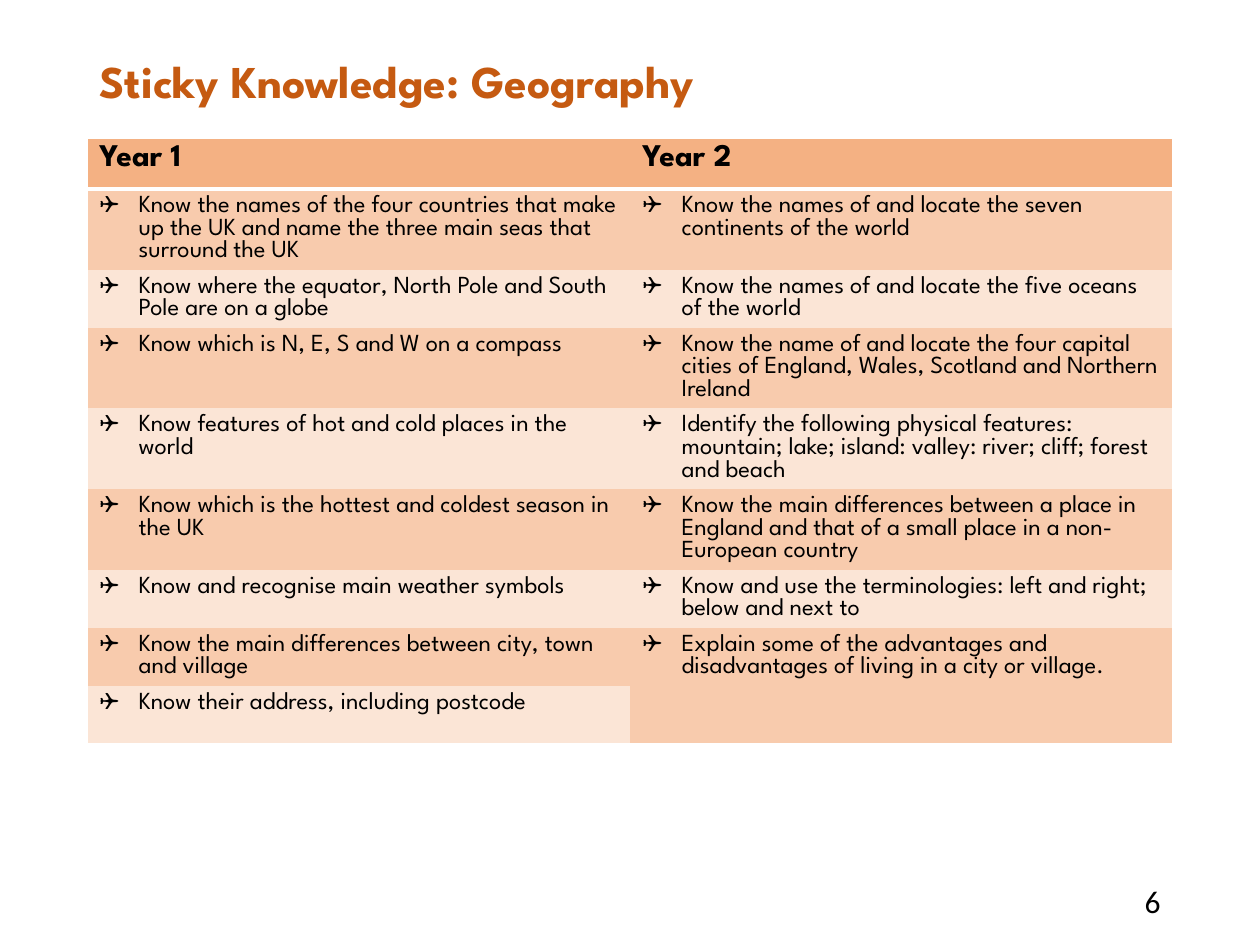
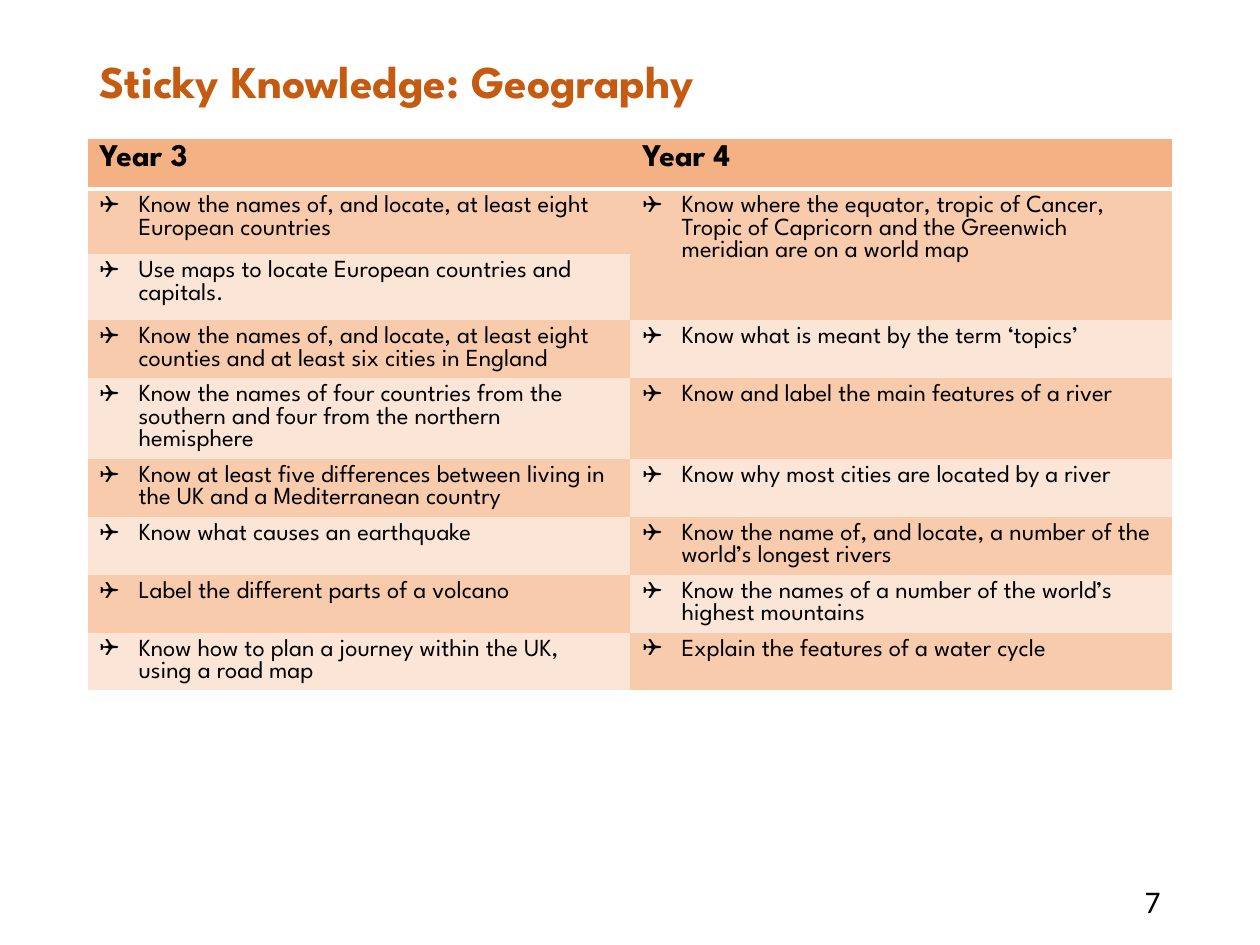
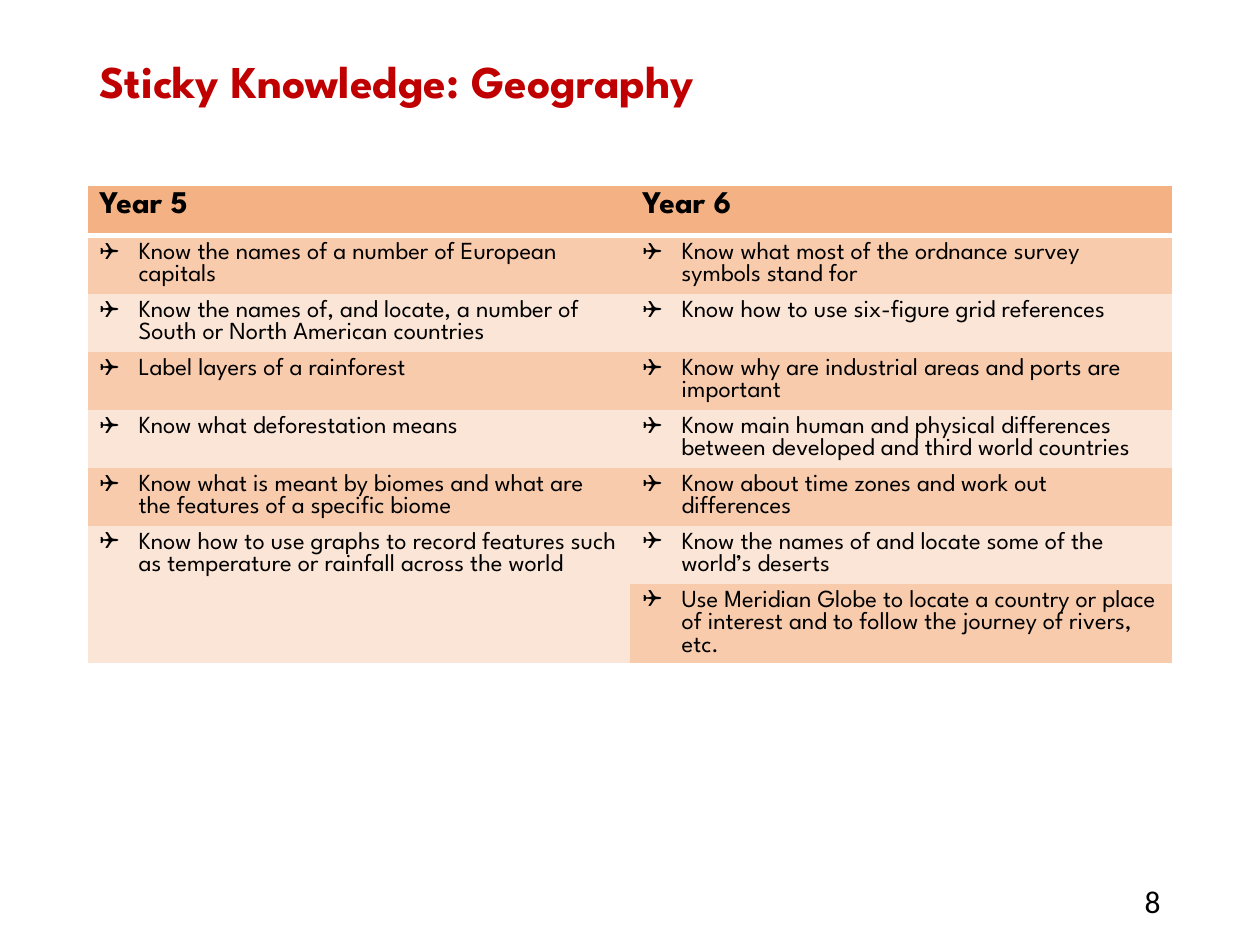
from dataclasses import dataclass
from typing import Optional

from lxml.etree import SubElement
from pptx import Presentation
from pptx.dml.color import RGBColor
from pptx.enum.text import MSO_ANCHOR, MSO_AUTO_SIZE, PP_ALIGN
from pptx.oxml import parse_xml
from pptx.oxml.ns import nsdecls, qn
from pptx.util import Inches, Pt

ORANGE = RGBColor(0xC5, 0x5A, 0x11)
RED = RGBColor(0xC0, 0x00, 0x00)
BLACK = RGBColor(0x00, 0x00, 0x00)
WHITE = RGBColor(0xFF, 0xFF, 0xFF)
HEADING_FILL = RGBColor(0xF4, 0xB1, 0x83)
BAND_FILLS = (RGBColor(0xF8, 0xCB, 0xAD), RGBColor(0xFB, 0xE5, 0xD6))

HEADING_FONT = "League Spartan"
NUMBER_FONT = "Calibri"
BULLET_FONT = "Wingdings"
TITLE = "Sticky Knowledge: Geography"
PLAIN_TABLE_STYLE = "{2D5ABB26-0587-4C30-8999-92F81FD0307C}"
TITLE_ONLY = 5
HEADING_HEIGHT = 0.4
ROW_HEIGHT = 0.41
INDENT = Inches(0.31)


@dataclass
class Box:
    left: float
    top: float
    width: float
    height: float

    def lengths(self):
        return [Inches(side) for side in (self.left, self.top, self.width, self.height)]


@dataclass
class Year:
    heading: str
    items: list
    double_item: Optional[int] = None


@dataclass
class Page:
    number: int
    title_color: RGBColor
    table_box: Box
    item_heights: list
    years: list
    title_fill: Optional[RGBColor] = None


TITLE_BOX = Box(0.69, 0.4, 8.62, 0.53)
NUMBER_BOX = Box(7.06, 6.95, 2.25, 0.4)

PAGES = [
    Page(6, ORANGE, Box(0.69, 1.1, 8.62, 5.87), [ROW_HEIGHT] * 7 + [0.46], [
        Year("Year 1", [
            "Know the names of the four countries that make up the UK and name the three main seas that surround the UK",
            "Know where the equator, North Pole and South Pole are on a globe",
            "Know which is N, E, S and W on a compass",
            "Know features of hot and cold places in the world",
            "Know which is the hottest and coldest season in the UK",
            "Know and recognise main weather symbols",
            "Know the main differences between city, town and village",
            "Know their address, including postcode",
        ]),
        Year("Year 2", [
            "Know the names of and locate the seven continents of the world",
            "Know the names of and locate the five oceans of the world",
            "Know the name of and locate the four capital cities of England, Wales, Scotland and Northern Ireland",
            "Identify the following physical features: mountain; lake; island: valley: river; cliff; forest and beach",
            "Know the main differences between a place in England and that of a small place in a non-European country",
            "Know and use the terminologies: left and right; below and next to",
            "Explain some of the advantages and disadvantages of living in a city or village.",
        ], double_item=6),
    ]),
    Page(7, ORANGE, Box(0.69, 1.1, 8.62, 5.64), [0.52] * 2 + [ROW_HEIGHT] * 6, [
        Year("Year 3", [
            "Know the names of, and locate, at least eight European countries",
            "Use maps to locate European countries and capitals.",
            "Know the names of, and locate, at least eight counties and at least six cities in England",
            "Know the names of four countries from the southern and four from the northern hemisphere",
            "Know at least five differences between living in the UK and a Mediterranean country",
            "Know what causes an earthquake",
            "Label the different parts of a volcano",
            "Know how to plan a journey within the UK, using a road map",
        ]),
        Year("Year 4", [
            "Know where the equator, tropic of Cancer, Tropic of Capricorn and the Greenwich meridian are on a world map",
            "Know what is meant by the term ‘topics’",
            "Know and label the main features of a river",
            "Know why most cities are located by a river",
            "Know the name of, and locate, a number of the world’s longest rivers",
            "Know the names of a number of the world’s highest mountains",
            "Explain the features of a water cycle",
        ], double_item=0),
    ], title_fill=WHITE),
    Page(8, RED, Box(0.69, 1.47, 8.62, 5.31), [ROW_HEIGHT] * 7, [
        Year("Year 5", [
            "Know the names of a number of European capitals",
            "Know the names of, and locate, a number of South or North American countries",
            "Label layers of a rainforest",
            "Know what deforestation means",
            "Know what is meant by biomes and what are the features of a specific biome",
            "Know how to use graphs to record features such as temperature or rainfall across the world",
        ], double_item=5),
        Year("Year 6", [
            "Know what most of the ordnance survey symbols stand for",
            "Know how to use six-figure grid references",
            "Know why are industrial areas and ports are important",
            "Know main human and physical differences between developed and third world countries",
            "Know about time zones and work out differences",
            "Know the names of and locate some of the world’s deserts",
            "Use Meridian Globe to locate a country or place of interest and to follow the journey of rivers, etc.",
        ]),
    ]),
]


def format_text(para, font_name, size, color, bold=False):
    for span in para.runs:
        span.font.name = font_name
        span.font.size = Pt(size)
        span.font.color.rgb = color
        span.font.bold = bold


def add_title(slide, box, color, fill):
    title = slide.shapes.title
    title.left, title.top, title.width, title.height = box.lengths()
    if fill is not None:
        title.fill.solid()
        title.fill.fore_color.rgb = fill
    frame = title.text_frame
    frame.text = TITLE
    frame.auto_size = MSO_AUTO_SIZE.NONE
    frame.vertical_anchor = MSO_ANCHOR.MIDDLE
    para = frame.paragraphs[0]
    para.alignment = PP_ALIGN.LEFT
    para.line_spacing = 0.9
    format_text(para, HEADING_FONT, 26, color, bold=True)


def add_page_number(slide, box, number):
    frame = slide.shapes.add_textbox(*box.lengths()).text_frame
    frame.word_wrap = True
    frame.vertical_anchor = MSO_ANCHOR.MIDDLE
    frame.text = str(number)
    para = frame.paragraphs[0]
    para.alignment = PP_ALIGN.RIGHT
    format_text(para, NUMBER_FONT, 18, BLACK)


def add_bullet(para):
    properties = para._p.get_or_add_pPr()
    properties.set("marL", str(INDENT))
    properties.set("indent", str(-INDENT))
    SubElement(properties, qn("a:buFont")).set("typeface", BULLET_FONT)
    SubElement(properties, qn("a:buChar")).set("char", "❑")


def add_borders(cell, widths):
    properties = cell._tc.get_or_add_tcPr()
    sides = [side for side in "LRTB" if side in widths]
    for position, side in enumerate(sides):
        properties.insert(position, parse_xml(
            f'<a:ln{side} {nsdecls("a")} w="{Pt(widths[side])}"><a:solidFill>'
            f'<a:srgbClr val="{WHITE}"/></a:solidFill></a:ln{side}>'))


def fill_cell(cell, text, size, fill, bold=False):
    cell.text = text
    cell.fill.solid()
    cell.fill.fore_color.rgb = fill
    para = cell.text_frame.paragraphs[0]
    format_text(para, HEADING_FONT, size, BLACK, bold)
    return para


def fill_year(table, column, year):
    outer_side = "LR"[column]
    last_row = len(table.rows) - 1
    heading = table.cell(0, column)
    fill_cell(heading, year.heading, 18, HEADING_FILL, bold=True)
    add_borders(heading, {outer_side: 1, "T": 1, "B": 3})
    row = 1
    for index, item in enumerate(year.items):
        cell = table.cell(row, column)
        end_row = row + (index == year.double_item)
        if end_row > row:
            cell.merge(table.cell(end_row, column))
        add_bullet(fill_cell(cell, item, 14, BAND_FILLS[index % 2]))
        borders = {outer_side: 1}
        if end_row == last_row:
            borders["B"] = 1
        add_borders(cell, borders)
        row = end_row + 1


def add_knowledge_table(slide, box, item_heights, years):
    row_heights = [HEADING_HEIGHT, *item_heights]
    frame = slide.shapes.add_table(len(row_heights), len(years), *box.lengths())
    table = frame.table
    table.first_row = table.horz_banding = False
    next(frame.element.iter(qn("a:tableStyleId"))).text = PLAIN_TABLE_STYLE
    for row, height in zip(table.rows, row_heights):
        row.height = Inches(height)
    frame.height = Inches(box.height)
    for column, year in enumerate(years):
        table.columns[column].width = Inches(box.width / len(years))
        fill_year(table, column, year)


def add_knowledge_slide(deck, page):
    slide = deck.slides.add_slide(deck.slide_layouts[TITLE_ONLY])
    add_title(slide, TITLE_BOX, page.title_color, page.title_fill)
    add_knowledge_table(slide, page.table_box, page.item_heights, page.years)
    add_page_number(slide, NUMBER_BOX, page.number)


def main():
    deck = Presentation()
    deck.slide_width = Inches(10)
    deck.slide_height = Inches(7.5)
    for page in PAGES:
        add_knowledge_slide(deck, page)
    deck.save("out.pptx")


if __name__ == "__main__":
    main()
